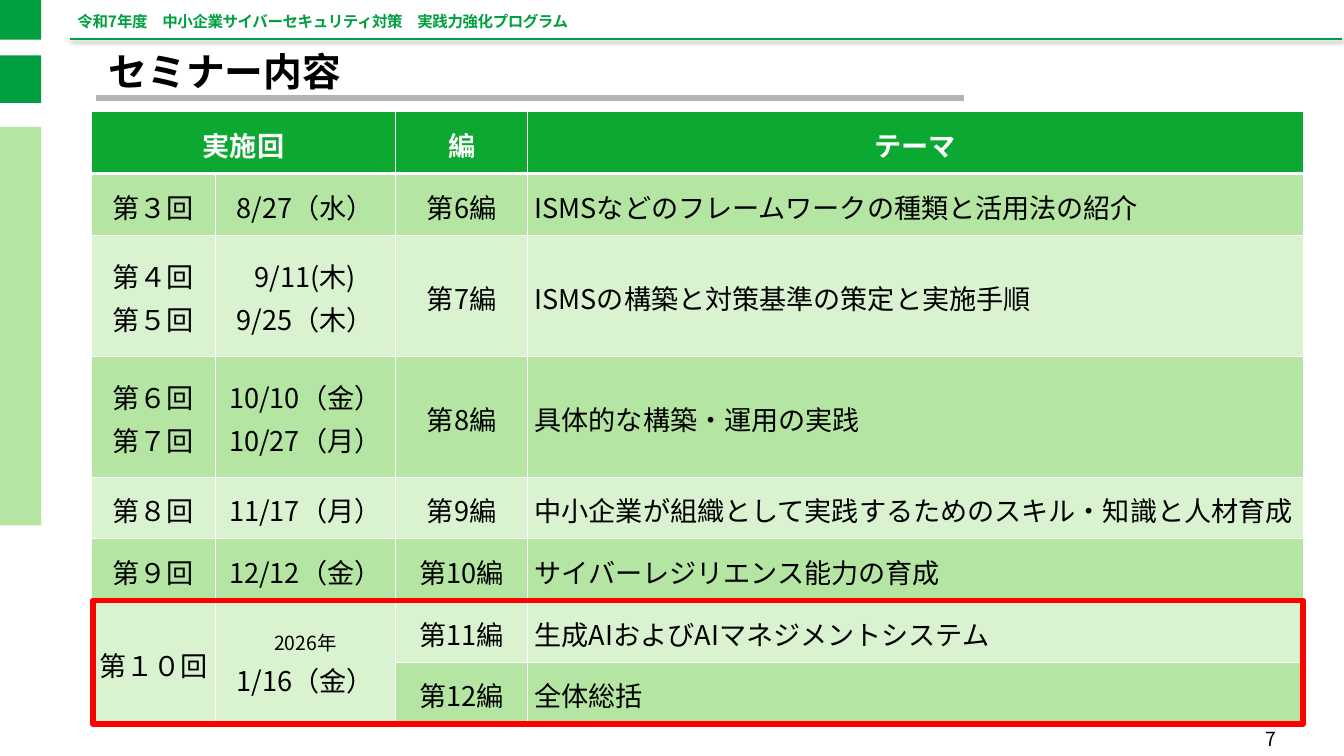
from lxml.etree import SubElement
from pptx import Presentation
from pptx.dml.color import RGBColor
from pptx.enum.shapes import MSO_CONNECTOR, MSO_SHAPE
from pptx.enum.text import MSO_ANCHOR, PP_ALIGN
from pptx.oxml.ns import qn
from pptx.util import Pt

FONT = "Noto Sans CJK JP"
COLORS = {
    "green": "009F40", "header": "0BA931", "band": "B4E5A2", "pale": "D9F2D0",
    "gray": "B2B3B5", "red": "FF0000", "white": "FFFFFF", "black": "000000",
}
COLUMN_WIDTHS = [127.5, 186, 136.5, 800]
ROW_HEIGHT, DOUBLE_ROW_HEIGHT = 63.7, 124.7
CELL_SIZE = 28
# Each cell is a list of lines; an empty list is covered by a merged cell.
ROWS = [
    (["実施回"], [], ["編"], ["テーマ"]),
    (["第３回"], ["8/27（水）"], ["第6編"], ["ISMSなどのフレームワークの種類と活用法の紹介"]),
    (["第４回", "第５回"], ["9/11(木)", "9/25（木）"], ["第7編"],
     ["ISMSの構築と対策基準の策定と実施手順"]),
    (["第６回", "第７回"], ["10/10（金）", "10/27（月）"], ["第8編"],
     ["具体的な構築・運用の実践"]),
    (["第８回"], ["11/17（月）"], ["第9編"],
     ["中小企業が組織として実践するためのスキル・知識と人材育成"]),
    (["第９回"], ["12/12（金）"], ["第10編"], ["サイバーレジリエンス能力の育成"]),
    (["第１０回"], ["2026年", "1/16（金）"], ["第11編"],
     ["生成AIおよびAIマネジメントシステム"]),
    ([], [], ["第12編"], ["全体総括"]),
]
MERGES = [((0, 0), (0, 1)), ((6, 0), (7, 0)), ((6, 1), (7, 1))]
SMALL_LINES = {"2026年": 20}


def color(name):
    return RGBColor.from_string(COLORS[name])


def add_run(paragraph, text, size, color_name, bold=False):
    run = paragraph.add_run()
    run.text = text
    run.font.size = Pt(size)
    run.font.bold = bold
    run.font.name = FONT
    run.font.color.rgb = color(color_name)
    properties = run.font._element
    SubElement(properties, qn("a:ea"), typeface=FONT)
    return properties


def add_text_frame(slide, box, anchor, margins=(7.2, 3.6, 7.2, 3.6)):
    frame = slide.shapes.add_textbox(*map(Pt, box)).text_frame
    frame.word_wrap = True
    frame.vertical_anchor = anchor
    (frame.margin_left, frame.margin_top,
     frame.margin_right, frame.margin_bottom) = map(Pt, margins)
    return frame


def add_rectangle(slide, box, fill=None, line=None, line_width=0):
    shape = slide.shapes.add_shape(MSO_SHAPE.RECTANGLE, *map(Pt, box))
    shape.shadow.inherit = False
    if fill:
        shape.fill.solid()
        shape.fill.fore_color.rgb = color(fill)
    else:
        shape.fill.background()
    if line:
        shape.line.color.rgb = color(line)
        shape.line.width = Pt(line_width)
    else:
        shape.line.fill.background()


def add_rule(slide, left, top, width, color_name, line_width):
    rule = slide.shapes.add_connector(
        MSO_CONNECTOR.STRAIGHT, Pt(left), Pt(top), Pt(left + width), Pt(top))
    rule.line.color.rgb = color(color_name)
    rule.line.width = Pt(line_width)
    return SubElement(rule._element.spPr, qn("a:effectLst"))


def add_side_bar(slide, box):
    left, top, width, height = box
    blocks = [(0, 41, "green"), (57, 49, "green"), (131, height - 131, "band")]
    for offset, block_height, fill in blocks:
        add_rectangle(slide, (left, top + offset, width, block_height), fill)


def add_program_header(slide, box):
    left, top, width, height = box
    # Green rule with a soft shadow
    effects = add_rule(slide, left, top + height, width, "green", 2)
    shadow = SubElement(effects, qn("a:outerShdw"), blurRad=str(Pt(4)),
                        dist=str(Pt(3)), dir="2700000", rotWithShape="0")
    shadow_color = SubElement(shadow, qn("a:srgbClr"), val=COLORS["black"])
    SubElement(shadow_color, qn("a:alpha"), val="40000")
    # Program name
    frame = add_text_frame(slide, (left + 7.2, top + 15.8, width - 54, 16),
                           MSO_ANCHOR.TOP, (0.7, 0.7, 0, 0))
    paragraph = frame.paragraphs[0]
    paragraph.line_spacing = Pt(15)
    properties = add_run(paragraph, "令和7年度　中小企業サイバーセキュリティ対策　実践力強化プログラム",
                         16, "green", True)
    properties.set("spc", "-40")


def add_title(slide, box):
    left, top, width, height = box
    add_rule(slide, left - 5.8, top + height + 2.8, 895, "gray", 6)
    paragraph = add_text_frame(slide, box, MSO_ANCHOR.MIDDLE).paragraphs[0]
    paragraph.line_spacing = 0.9
    add_run(paragraph, "セミナー内容", 40, "black", True)


def set_borders(cell, row_index):
    widths = {"a:lnL": 1, "a:lnR": 1,
              "a:lnT": 3 if row_index == 1 else 1,
              "a:lnB": 3 if row_index == 0 else 1}
    properties = cell._tc.get_or_add_tcPr()
    for tag, width in widths.items():
        border = SubElement(properties, qn(tag), w=str(Pt(width)))
        fill = SubElement(border, qn("a:solidFill"))
        SubElement(fill, qn("a:srgbClr"), val=COLORS["white"])


def fill_cell(cell, lines, row_index, centered):
    is_header = row_index == 0
    set_borders(cell, row_index)
    cell.fill.solid()
    cell.fill.fore_color.rgb = color(
        "header" if is_header else "band" if row_index % 2 else "pale")
    cell.vertical_anchor = MSO_ANCHOR.MIDDLE
    frame = cell.text_frame
    for index, line in enumerate(lines):
        paragraph = frame.add_paragraph() if index else frame.paragraphs[0]
        paragraph.alignment = PP_ALIGN.CENTER if centered else PP_ALIGN.LEFT
        paragraph.line_spacing = 1.1
        add_run(paragraph, line, SMALL_LINES.get(line, CELL_SIZE),
                "white" if is_header else "black", is_header)


def add_schedule(slide, box):
    left, top, width, height = box
    table = slide.shapes.add_table(
        len(ROWS), len(COLUMN_WIDTHS), *map(Pt, box)).table
    for column, column_width in zip(table.columns, COLUMN_WIDTHS):
        column.width = Pt(column_width)
    for row_index, row in enumerate(ROWS):
        is_double = len(row[0]) == 2
        table.rows[row_index].height = Pt(
            DOUBLE_ROW_HEIGHT if is_double else ROW_HEIGHT)
        for column_index, lines in enumerate(row):
            centered = row_index == 0 or column_index < 3
            fill_cell(table.cell(row_index, column_index), lines, row_index, centered)
    for first, last in MERGES:
        table.cell(*first).merge(table.cell(*last))
    # Red frame around the last session
    frame_height = 2 * ROW_HEIGHT
    add_rectangle(slide, (left + 1.2, top + height - frame_height, width - 1, frame_height),
                  line="red", line_width=6)


def add_page_number(slide, box):
    paragraph = add_text_frame(slide, box, MSO_ANCHOR.BOTTOM).paragraphs[0]
    paragraph.alignment = PP_ALIGN.RIGHT
    add_run(paragraph, "7", 20, "black")


def main():
    presentation = Presentation()
    presentation.slide_width = Pt(1386.72)
    presentation.slide_height = Pt(779.76)
    slide = presentation.slides.add_slide(presentation.slide_layouts[6])
    add_program_header(slide, (72, 0, 1312.5, 40.3))
    add_side_bar(slide, (0, 0, 42.5, 542))
    add_page_number(slide, (1011.6, 735.8, 311.8, 41.8))
    add_title(slide, (105.1, 54.7, 1176.5, 43.9))
    table_height = 6 * ROW_HEIGHT + 2 * DOUBLE_ROW_HEIGHT
    add_schedule(slide, (94.5, 115.2, sum(COLUMN_WIDTHS), table_height))
    presentation.save("out.pptx")


if __name__ == "__main__":
    main()
